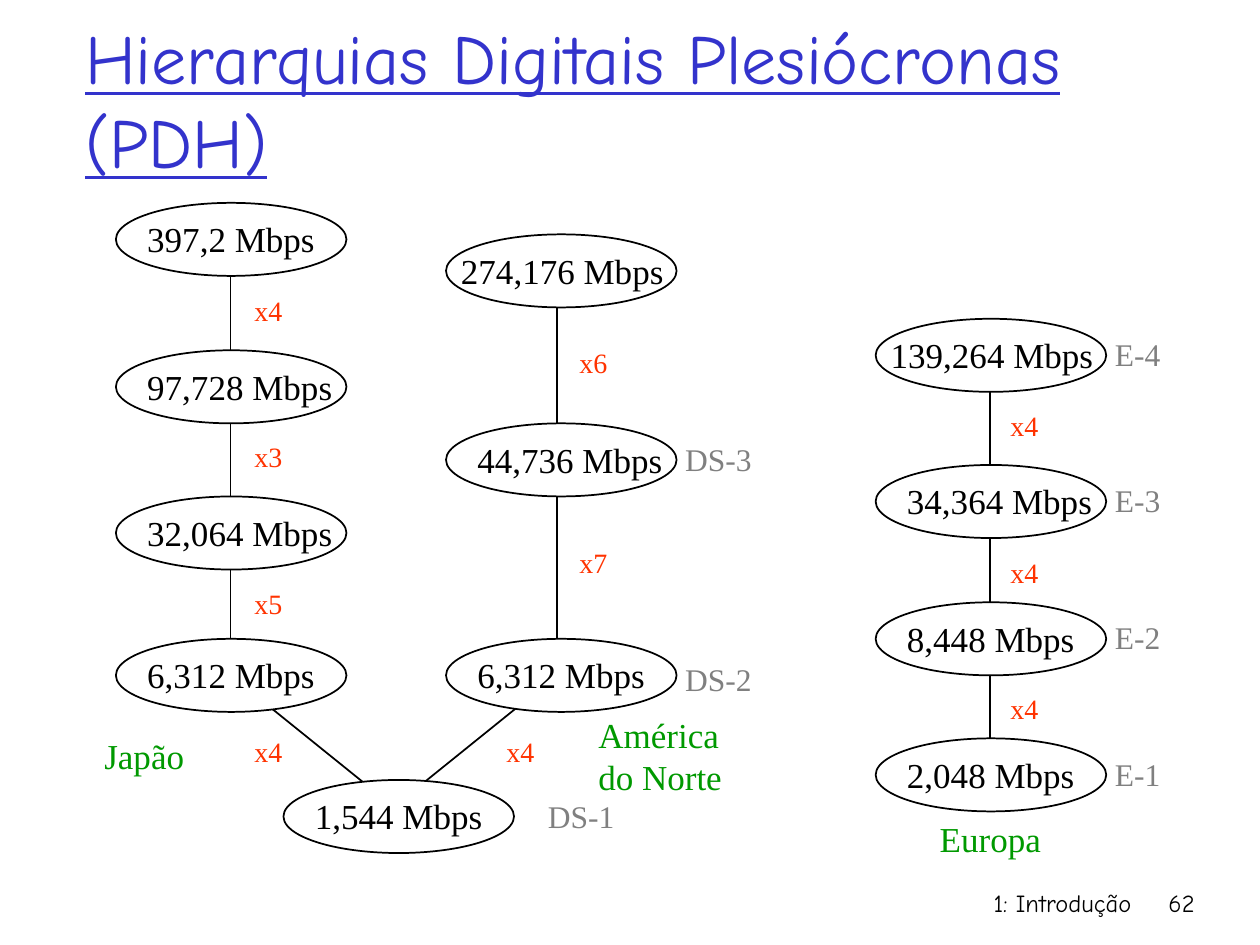
from pptx import Presentation
from pptx.dml.color import RGBColor
from pptx.enum.shapes import MSO_CONNECTOR, MSO_SHAPE
from pptx.enum.text import MSO_ANCHOR, MSO_AUTO_SIZE, PP_ALIGN
from pptx.oxml.ns import qn
from pptx.util import Inches, Pt
from lxml import etree

LINE, OVAL = MSO_CONNECTOR.STRAIGHT, MSO_SHAPE.OVAL
TOP, BOTTOM = MSO_ANCHOR.TOP, MSO_ANCHOR.BOTTOM
LEFT, RIGHT = PP_ALIGN.LEFT, PP_ALIGN.RIGHT
GROW, FIXED = MSO_AUTO_SIZE.SHAPE_TO_FIT_TEXT, MSO_AUTO_SIZE.NONE

BLACK = RGBColor(0, 0, 0)
WHITE = RGBColor(255, 255, 255)
BLUE = RGBColor(0x33, 0x33, 0xCC)
RED = RGBColor(0xFF, 0x33, 0x00)
GREEN = RGBColor(0, 0x99, 0)
GRAY = RGBColor(0x80, 0x80, 0x80)
SERIF, COMIC = "Times New Roman", "Comic Neue"

NODE_W, NODE_H = 1.83, 0.58
STEM_H = 3.25

# Towers: offset from the top, rate, level, factor below, offset of factor
JAPAN = [(0, "397,2 Mbps", "", "x4", 0.67),
         (1.17, "97,728 Mbps", "", "x3", 1.83),
         (2.33, "32,064 Mbps", "", "x5", 3),
         (3.46, "6,312 Mbps", "", "", 0)]
AMERICA = [(0, "274,176 Mbps", "", "x6", 0.83),
           (1.5, "44,736 Mbps", "DS-3", "x7", 2.42),
           (3.21, "6,312 Mbps", "DS-2", "", 0)]
EUROPE = [(0, "139,264 Mbps", "E-4", "x4", 0.66),
          (1.16, "34,364 Mbps", "E-3", "x4", 1.83),
          (2.25, "8,448 Mbps", "E-2", "x4", 2.91),
          (3.33, "2,048 Mbps", "E-1", "", 0)]


def write(slide, text, x, y, w, h, size=20, color=BLACK, font=SERIF,
          align=LEFT, anchor=TOP, wrap=False, under=False):
    box = slide.shapes.add_textbox(Inches(x), Inches(y), Inches(w), Inches(h))
    frame = box.text_frame
    frame.word_wrap = wrap
    frame.auto_size = FIXED if wrap else GROW
    frame.vertical_anchor = anchor
    frame.text = text
    for par in frame.paragraphs:
        par.alignment = align
        for run in par.runs:
            run.font.size = Pt(size)
            run.font.name = font
            run.font.color.rgb = color
            run.font.underline = under


def line(slide, x1, y1, x2, y2):
    link = slide.shapes.add_connector(
        LINE, Inches(x1), Inches(y1), Inches(x2), Inches(y2))
    link.line.color.rgb = BLACK
    link.line.width = Pt(1)
    props = link._element.find(qn("p:spPr"))
    etree.SubElement(props, qn("a:effectLst"))


def node(slide, x, y, rate):
    oval = slide.shapes.add_shape(
        OVAL, Inches(x), Inches(y), Inches(NODE_W), Inches(NODE_H))
    oval.shadow.inherit = False
    oval.fill.solid()
    oval.fill.fore_color.rgb = WHITE
    oval.line.color.rgb = BLACK
    oval.line.width = Pt(1)
    # Long rates start nearer to the left edge
    inset = 0.15 if len(rate) < 12 else 0.02
    width = 1.53 + 0.14 * (len(rate) - 10)
    write(slide, rate, x + inset, y + 0.07, width, 0.43)


def factor(slide, text, x, y):
    write(slide, text, x, y, 0.42, 0.37, size=16, color=RED)


def level(slide, text, x, y):
    width = 0.73 if text.startswith("DS") else 0.56
    write(slide, text, x, y, width, 0.4, size=18, color=GRAY)


def region(slide, text, x, y, w, h):
    write(slide, text, x, y, w, h, color=GREEN)


def tower(slide, x, y, nodes, stem, start, mark):
    line(slide, x + stem, y + start, x + stem, y + start + STEM_H)
    for drop, rate, name, times, gap in nodes:
        node(slide, x, y + drop, rate)
        if name:
            level(slide, name, x + 1.8, y + drop + (0.12 if name == "DS-2" else 0.08))
        if times:
            factor(slide, times, x + mark, y + gap)


def base(slide, x, y):
    """Shared first level, fed by the two western towers."""
    line(slide, x + 2.17, y - 0.83, x + 0.83, y + 0.25)
    line(slide, x - 0.42, y - 0.83, x + 0.92, y + 0.25)
    node(slide, x, y, "1,544 Mbps")
    level(slide, "DS-1", x + 2, y + 0.09)
    for left in (x - 0.33, x + 1.67):
        factor(slide, "x4", left, y - 0.41)


def title(slide, x, y, w, h):
    write(slide, "Hierarquias Digitais Plesiócronas (PDH)", x, y, w, h,
          size=40, color=BLUE, font=COMIC, anchor=BOTTOM, wrap=True, under=True)


def footer(slide, x, y, w, h):
    page = 0.5
    for text, left, width in (("1: Introdução", x, w - page),
                              ("62", x + w - page, page)):
        write(slide, text, left, y, width, h, size=14, font=COMIC,
              align=RIGHT, wrap=True)


def main():
    deck = Presentation()
    deck.slide_width, deck.slide_height = Inches(10), Inches(7.5)
    slide = deck.slides.add_slide(deck.slide_layouts[6])

    title(slide, 0.58, 0.25, 8.5, 1.25)
    base(slide, 2.25, 6.19)
    tower(slide, 0.92, 1.61, JAPAN, stem=0.91, start=0.42, mark=1)
    tower(slide, 3.54, 1.86, AMERICA, stem=0.88, start=0.33, mark=0.96)
    tower(slide, 6.95, 2.53, EUROPE, stem=0.91, start=0.33, mark=0.97)

    # Regions, a little wider than their words so that each stays whole
    region(slide, "Japão", 0.73, 5.78, 0.87, 0.43)
    region(slide, "América\ndo Norte", 4.65, 5.61, 1.2, 0.77)
    region(slide, "Europa", 7.36, 6.44, 1.04, 0.43)

    footer(slide, 5.92, 7, 3.66, 0.5)
    deck.save("out.pptx")


if __name__ == "__main__":
    main()
